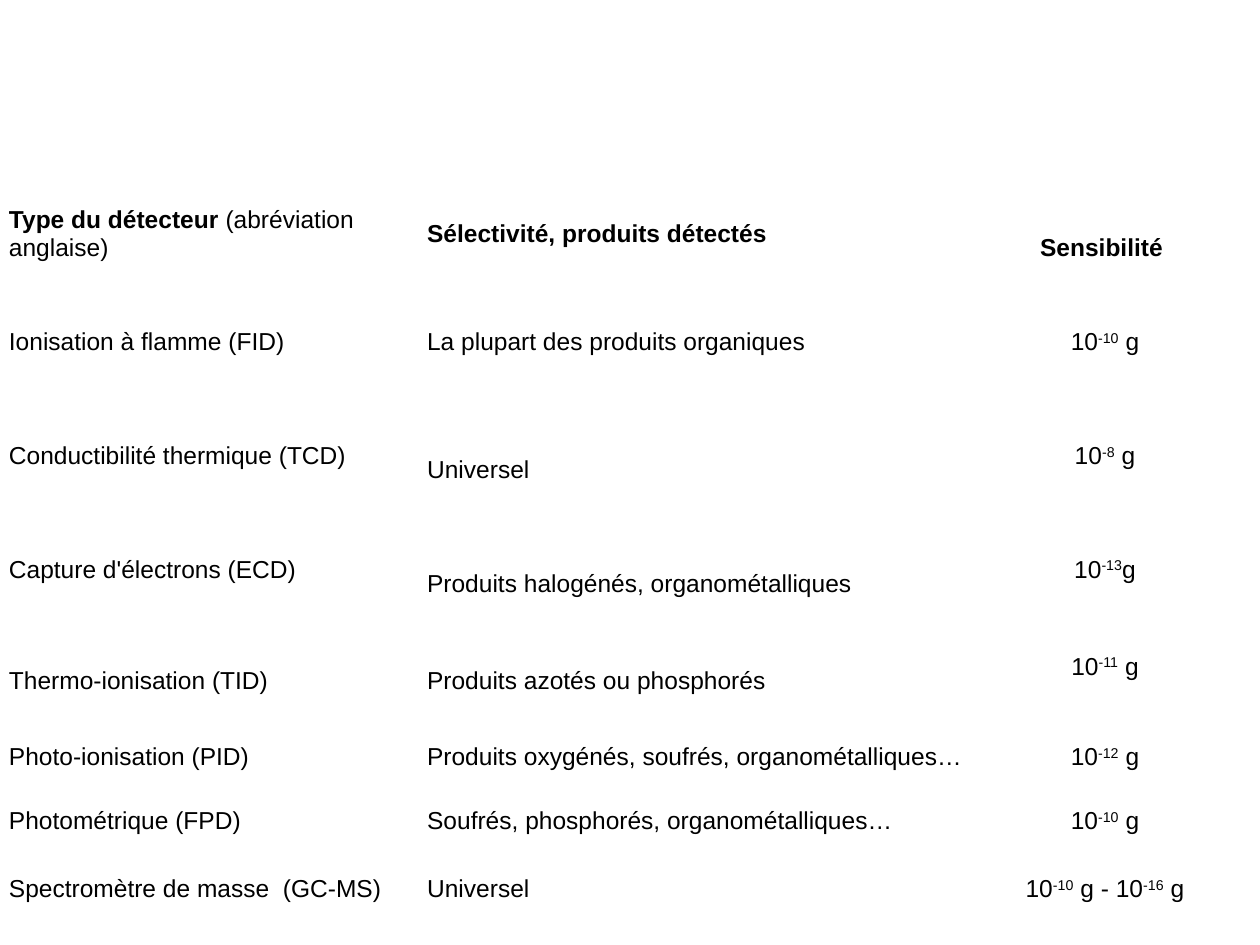
from dataclasses import dataclass

from pptx import Presentation
from pptx.dml.color import RGBColor
from pptx.enum.text import MSO_ANCHOR as Anchor, PP_ALIGN as Align
from pptx.table import Table, _Cell as TableCell
from pptx.util import Cm, Pt

NO_GRID_STYLE = "{2D5ABB26-0587-4C30-8999-92F81FD0307C}"
COLUMN_WIDTHS = [8.43, 11.51, 4.67]
ROW_HEIGHTS = [2.08, 2.29, 2.29, 2.29, 1.63, 1.45, 1.14, 1.6]
TEXT_FORMAT = {"name": "Arial", "size": Pt(14)}
CELL_FORMAT = {
    "vertical_anchor": Anchor.MIDDLE,
    "margin_left": Cm(0.18),
    "margin_right": Cm(0.18),
    "margin_top": Cm(0.1),
}
BOTTOM_MARGIN = 0.1
LIFT = 0.57


@dataclass(frozen=True)
class Run:
    text: str
    bold: bool = False
    raised: bool = False


@dataclass(frozen=True)
class Entry:
    runs: list[Run]
    lifted: bool = False


@dataclass(frozen=True)
class Detector:
    name: Entry
    products: Entry
    sensitivity: Entry


def plain(text: str, lifted: bool = False) -> Entry:
    return Entry([Run(text)], lifted)


def power(marked_text: str, lifted: bool = False) -> Entry:
    pieces = marked_text.split("^")
    return Entry([Run(piece, raised=index % 2 == 1) for index, piece in enumerate(pieces)], lifted)


HEADER = Detector(
    Entry([Run("Type du détecteur ", bold=True), Run("(abréviation anglaise)")], lifted=True),
    Entry([Run("Sélectivité, produits détectés", bold=True)], lifted=True),
    Entry([Run("Sensibilité ", bold=True)]),
)
DETECTORS = [
    Detector(plain("Ionisation à flamme (FID)", True),
             plain("La plupart des produits organiques", True), power("10^-10^ g", True)),
    Detector(plain("Conductibilité thermique (TCD)", True),
             plain("Universel"), power("10^-8^ g", True)),
    Detector(plain("Capture d'électrons (ECD)", True),
             plain("Produits halogénés, organométalliques"), power("10^-13^g", True)),
    Detector(plain("Thermo-ionisation (TID)"),
             plain("Produits azotés ou phosphorés"), power("10^-11^ g", True)),
    Detector(plain("Photo-ionisation (PID)"),
             plain("Produits oxygénés, soufrés, organométalliques…"), power("10^-12^ g")),
    Detector(plain("Photométrique (FPD)"),
             plain("Soufrés, phosphorés, organométalliques…"), power("10^-10^ g")),
    Detector(plain("Spectromètre de masse  (GC-MS)"),
             plain("Universel"), power("10^-10^ g - 10^-16^ g")),
]


def color(code: str) -> RGBColor:
    return RGBColor.from_string(code)


def apply_format(target: object, values: dict) -> None:
    for attribute, value in values.items():
        setattr(target, attribute, value)


def fill_cell(cell: TableCell, entry: Entry, alignment: Align) -> None:
    apply_format(cell, CELL_FORMAT)
    cell.margin_bottom = Cm(BOTTOM_MARGIN + LIFT * entry.lifted)
    cell.fill.background()
    paragraph = cell.text_frame.paragraphs[0]
    paragraph.alignment = alignment
    for part in entry.runs:
        run = paragraph.add_run()
        run.text = part.text
        apply_format(run.font, TEXT_FORMAT | {"bold": part.bold})
        run.font.color.rgb = color("000000")
        if part.raised:
            run._r.get_or_add_rPr().set("baseline", "30000")


def fill_row(table: Table, row: int, detector: Detector) -> None:
    fill_cell(table.cell(row, 0), detector.name, Align.LEFT)
    fill_cell(table.cell(row, 1), detector.products, Align.LEFT)
    fill_cell(table.cell(row, 2), detector.sensitivity, Align.CENTER)


def main() -> None:
    presentation = Presentation()
    presentation.slide_width, presentation.slide_height = Cm(25.4), Cm(19.05)
    slide = presentation.slides.add_slide(presentation.slide_layouts[6])
    table = slide.shapes.add_table(
        len(ROW_HEIGHTS), len(COLUMN_WIDTHS),
        Cm(0), Cm(3.96), Cm(sum(COLUMN_WIDTHS)), Cm(sum(ROW_HEIGHTS)),
    ).table
    apply_format(table, {"first_row": False, "horz_banding": False})
    table._tbl.tblPr.find("{*}tableStyleId").text = NO_GRID_STYLE
    for column, width in zip(table.columns, COLUMN_WIDTHS):
        column.width = Cm(width)
    for row, height in zip(table.rows, ROW_HEIGHTS):
        row.height = Cm(height)
    for index, detector in enumerate([HEADER, *DETECTORS]):
        fill_row(table, index, detector)
    presentation.save("out.pptx")


if __name__ == "__main__":
    main()
